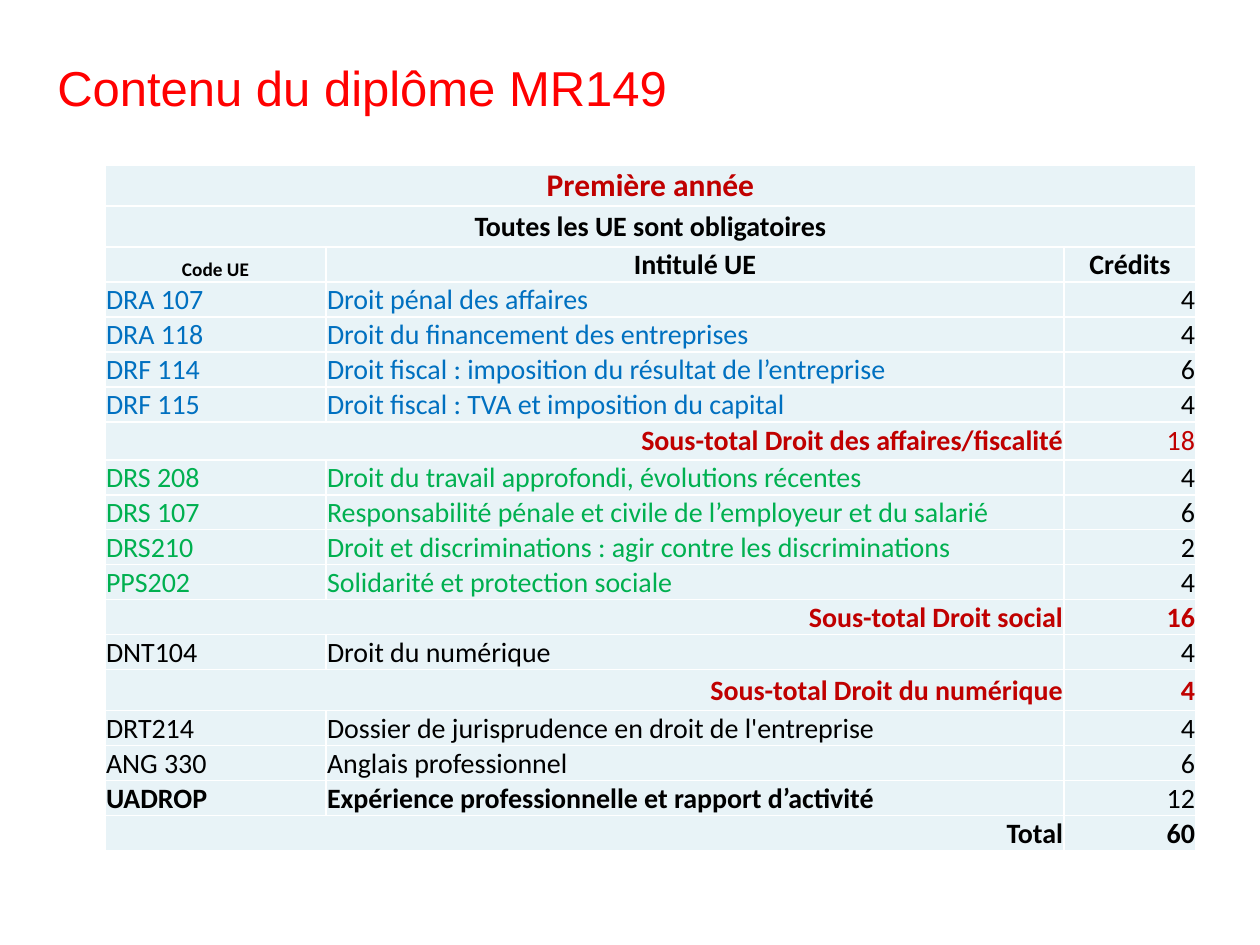
"""Build the slide listing the courses and credits of the first year."""
from lxml import etree
from pptx import Presentation
from pptx import util as u
from pptx.dml.color import RGBColor
from pptx.enum import text
from pptx.oxml.ns import qn

RED = RGBColor(0xFF, 0x00, 0x00)
DARK = RGBColor(0xC0, 0x00, 0x00)
BLUE = RGBColor(0x00, 0x70, 0xC0)
GREEN = RGBColor(0x00, 0xB0, 0x50)
BLACK = RGBColor(0x00, 0x00, 0x00)
PALE = RGBColor(0xE8, 0xF3, 0xF7)
LEFT, MID, RIGHT = text.PP_ALIGN.LEFT, text.PP_ALIGN.CENTER, text.PP_ALIGN.RIGHT


def px(num):
    return u.Emu(round(num * 914400 / 126))


def put(para, words, font, size, color, bold, align):
    para.alignment = align
    run = para.add_run()
    run.text = words
    run.font.name = font
    run.font.size = u.Pt(size)
    run.font.bold = bold
    run.font.color.rgb = color


deck = Presentation()
deck.slide_width, deck.slide_height = px(1260), px(945)
slide = deck.slides.add_slide(deck.slide_layouts[6])

title = slide.shapes.add_textbox(px(45), px(45), px(1170), px(102)).text_frame
title.word_wrap = True
title.margin_top = px(13)
put(title.paragraphs[0], "Contenu du diplôme MR149", "Arial", 28, RED, False, LEFT)

rows = [
    ("Première année", None, None, DARK, True, True),
    ("Toutes les UE sont obligatoires", None, None, BLACK, True, True),
    ("Code UE", "Intitulé UE", "Crédits", BLACK, True, True),
    ("DRA 107", "Droit pénal des affaires", "4", BLUE, False, False),
    ("DRA 118", "Droit du financement des entreprises", "4", BLUE, False, False),
    ("DRF 114", "Droit fiscal : imposition du résultat de l’entreprise", "6", BLUE, False, False),
    ("DRF 115", "Droit fiscal : TVA et imposition du capital", "4", BLUE, False, False),
    ("Sous-total Droit des affaires/fiscalité", None, "18", DARK, True, False),
    ("DRS 208", "Droit du travail approfondi, évolutions récentes", "4", GREEN, False, False),
    ("DRS 107", "Responsabilité pénale et civile de l’employeur et du salarié", "6", GREEN, False, False),
    ("DRS210", "Droit et discriminations : agir contre les discriminations", "2", GREEN, False, False),
    ("PPS202", "Solidarité et protection sociale", "4", GREEN, False, False),
    ("Sous-total Droit social", None, "16", DARK, True, True),
    ("DNT104", "Droit du numérique", "4", BLACK, False, False),
    ("Sous-total Droit du numérique", None, "4", DARK, True, True),
    ("DRT214", "Dossier de jurisprudence en droit de l'entreprise", "4", BLACK, False, False),
    ("ANG 330", "Anglais professionnel", "6", BLACK, False, False),
    ("UADROP", "Expérience professionnelle et rapport d’activité", "12", BLACK, True, False),
    ("Total", None, "60", BLACK, True, True),
]
tall = {0: 41, 1: 41, 7: 38, 14: 41}
low = {(2, 0), (2, 1), (2, 2), (15, 1), (15, 2)}
sizes = {(0, 0): 18, (2, 0): 11}

frame = slide.shapes.add_table(len(rows), 3, px(105), px(165), px(1091), px(686))
table = frame.table
table.first_row = table.horz_banding = False
for col, wide in zip(table.columns, (221, 738, 132)):
    col.width = px(wide)

for r, (code, name, mark, color, bold, strong) in enumerate(rows):
    table.rows[r].height = px(tall.get(r, 35))
    for c, words in enumerate((code, name, mark)):
        cell = table.cell(r, c)
        cell.margin_left = cell.margin_right = cell.margin_top = px(1)
        cell.margin_bottom = 0
        cell.vertical_anchor = text.MSO_ANCHOR.BOTTOM if (r, c) in low else text.MSO_ANCHOR.MIDDLE
        props = cell._tc.get_or_add_tcPr()
        for side in ("a:lnL", "a:lnR", "a:lnT", "a:lnB"):
            line = etree.SubElement(props, qn(side), w=str(u.Pt(1)))
            fill = etree.SubElement(line, qn("a:solidFill"))
            etree.SubElement(fill, qn("a:srgbClr"), val="FFFFFF")
        cell.fill.solid()
        cell.fill.fore_color.rgb = PALE
        if words is None:
            continue
        align = MID if r < 3 else RIGHT if c == 2 or name is None else LEFT
        tint = BLACK if c == 2 and color != DARK else color
        put(cell.text_frame.paragraphs[0], words, "Calibri", sizes.get((r, c), 16),
            tint, strong if c == 2 else bold, align)
    if name is None:
        table.cell(r, 0).merge(table.cell(r, 2 if mark is None else 1))

deck.save("out.pptx")
